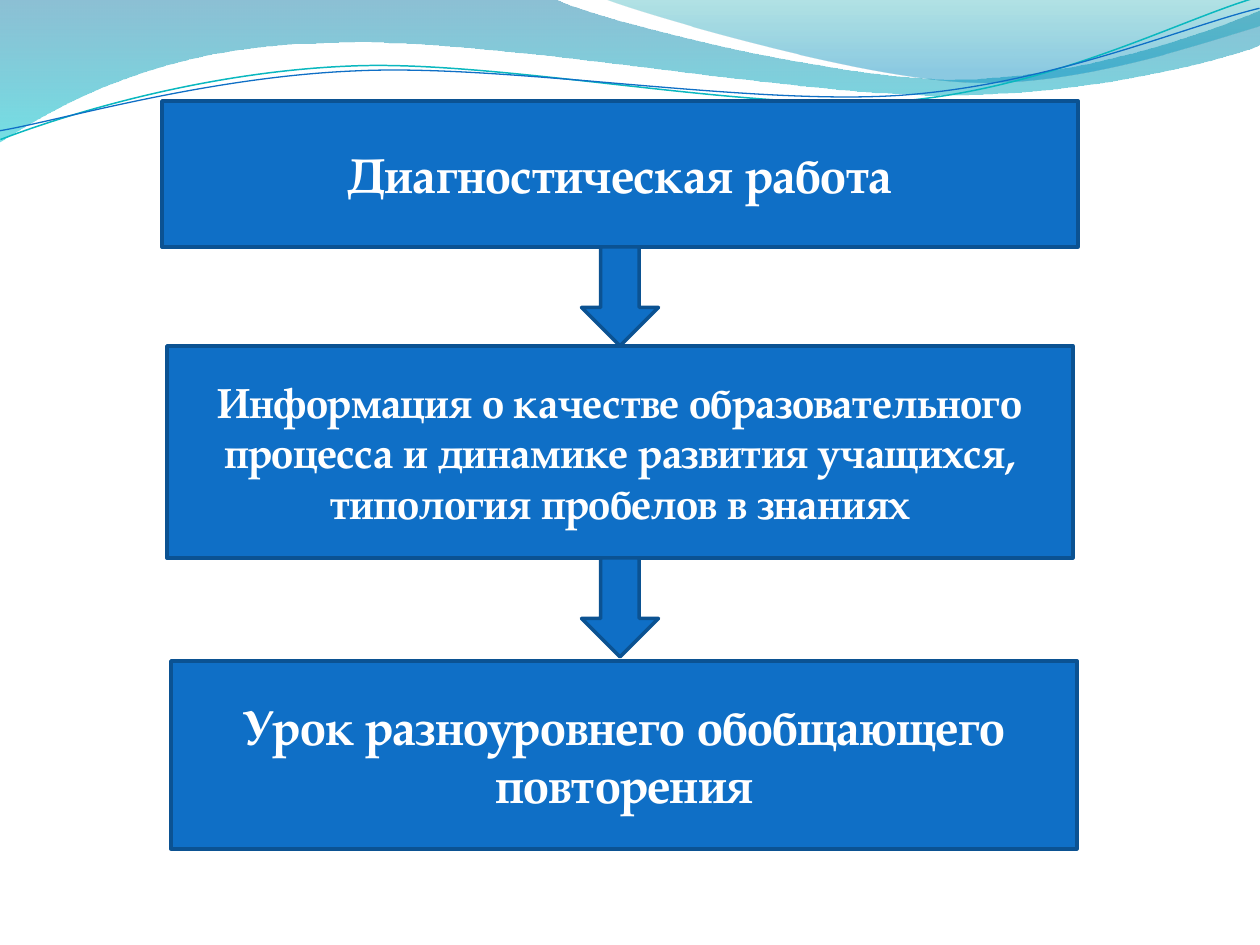
from lxml import etree
from pptx import Presentation
from pptx import util as u
from pptx.dml.color import RGBColor
from pptx.enum import shapes, text
from pptx.oxml.ns import qn

PX = 914400 // 126
FONT = "TeX Gyre Pagella"
BLUE, DARK_BLUE, WHITE = "0F6FC6", "0B5292", "FFFFFF"

# Steps of the scheme: wording, text size, (left, top, width, height)
STEPS = [
    ("Диагностическая работа", 28, (162, 101, 916, 146)),
    ("Информация о качестве образовательного процесса и динамике развития "
     "учащихся, типология пробелов в знаниях", 24, (167, 346, 906, 212)),
    ("Урок разноуровнего обобщающего повторения", 28, (171, 661, 906, 188)),
]
ARROW_CENTRE, ARROW_LENGTH, ARROW_BREADTH = 620, 99, 77

# Outlines: a start, then segments of one point (straight) or three (Bezier)
# Gradient stops: position, colour, opacity in percent
WAVES = [
    ([[(0, 0)], [(554, -1)],
      [(600, 21), (837, 79), (955, 79)], [(1075, 79), (1207, 33), (1260, 11)],
      [(1261, 45)],
      [(1239, 55), (1096, 96), (940, 95)], [(784, 95), (481, 35), (324, 43)],
      [(163, 45), (58, 105), (-1, 142)]],
     [(0, "0074A1", 45), (1, "00C6CF", 55)]),
    ([[(604, -1)],
      [(641, 14), (859, 78), (969, 82)], [(1079, 87), (1211, 40), (1260, 26)],
      [(1260, 0)]],
     [(0, "00A1A9", 30), (0.8, "008BBF", 45)]),
]
# Thin strands, given before they are tilted
STRAND_TILT = -2.7
STRANDS = [
    ([[(-2, 110)], [(58, 90), (200, 52), (350, 53)],
      [(499, 53), (745, 118), (896, 114)], [(1049, 109), (1184, 45), (1260, 27)]],
     "0AB8BF", 0.85),
    ([[(-2, 101)], [(57, 94), (207, 57), (357, 58)],
      [(509, 58), (750, 112), (902, 108)], [(1052, 104), (1188, 52), (1262, 38)]],
     BLUE, 0.75),
]


def colour(value):
    return RGBColor.from_string(value)


def add_outline(slide, segments, close):
    (start,), *rest = segments
    builder = slide.shapes.build_freeform(*start, scale=PX)
    builder.add_line_segments([point for segment in rest for point in segment],
                              close=close)
    outline = builder.convert_to_shape()
    outline.shadow.inherit = False

    # Turn each run of three points into one Bezier curve
    corners = iter(list(outline._element.iter(qn("a:lnTo"))))
    for segment in rest:
        group = [next(corners) for _ in segment]
        if len(group) == 3:
            curve = etree.Element(qn("a:cubicBezTo"))
            group[0].addprevious(curve)
            for corner in group:
                curve.append(corner[0])
                corner.getparent().remove(corner)
    return outline


def add_wave(slide, segments, stops):
    wave = add_outline(slide, segments, close=True)
    wave.line.fill.background()
    wave.fill.gradient()
    wave.fill.gradient_angle = 270
    for stop, (position, tint, _) in zip(wave.fill.gradient_stops, stops):
        stop.position = position
        stop.color.rgb = colour(tint)
    # Opacity of each gradient stop
    tints = wave._element.spPr.iter(qn("a:srgbClr"))
    for tint, (_, _, opacity) in zip(tints, stops):
        etree.SubElement(tint, qn("a:alpha")).set("val", str(opacity * 1000))


def add_strand(slide, segments, tint, width):
    strand = add_outline(slide, segments, close=False)
    strand.rotation = STRAND_TILT
    strand.fill.background()
    strand.line.color.rgb = colour(tint)
    strand.line.width = u.Pt(width)


def add_block(slide, kind, box):
    block = slide.shapes.add_shape(kind, *(round(side * PX) for side in box))
    block.shadow.inherit = False
    block.fill.solid()
    block.fill.fore_color.rgb = colour(BLUE)
    block.line.color.rgb = colour(DARK_BLUE)
    block.line.width = u.Pt(2)
    return block


def write(block, wording, size, tint=WHITE, bold=True):
    frame = block.text_frame
    frame.word_wrap = True
    frame.vertical_anchor = text.MSO_ANCHOR.MIDDLE
    paragraph = frame.paragraphs[0]
    paragraph.alignment = text.PP_ALIGN.CENTER
    run = paragraph.add_run()
    run.text = wording
    run.font.name = FONT
    run.font.size = u.Pt(size)
    run.font.bold = bold
    run.font.color.rgb = colour(tint)


def main():
    deck = Presentation()
    deck.slide_width, deck.slide_height = u.Inches(10), u.Inches(7.5)
    slide = deck.slides.add_slide(deck.slide_layouts[6])

    # Waves along the top
    for segments, stops in WAVES:
        add_wave(slide, segments, stops)
    for segments, tint, width in STRANDS:
        add_strand(slide, segments, tint, width)

    # Steps
    for wording, size, box in STEPS:
        block = add_block(slide, shapes.MSO_SHAPE.RECTANGLE, box)
        write(block, wording, size=size)

    # An arrow turned down from every step but the last
    for _, _, (_, top, _, height) in STEPS[:-1]:
        middle = top + height + ARROW_LENGTH / 2
        arrow = add_block(slide, shapes.MSO_SHAPE.RIGHT_ARROW,
                          (ARROW_CENTRE - ARROW_LENGTH / 2,
                           middle - ARROW_BREADTH / 2,
                           ARROW_LENGTH, ARROW_BREADTH))
        arrow.rotation = 90

    deck.save("out.pptx")


if __name__ == "__main__":
    main()
